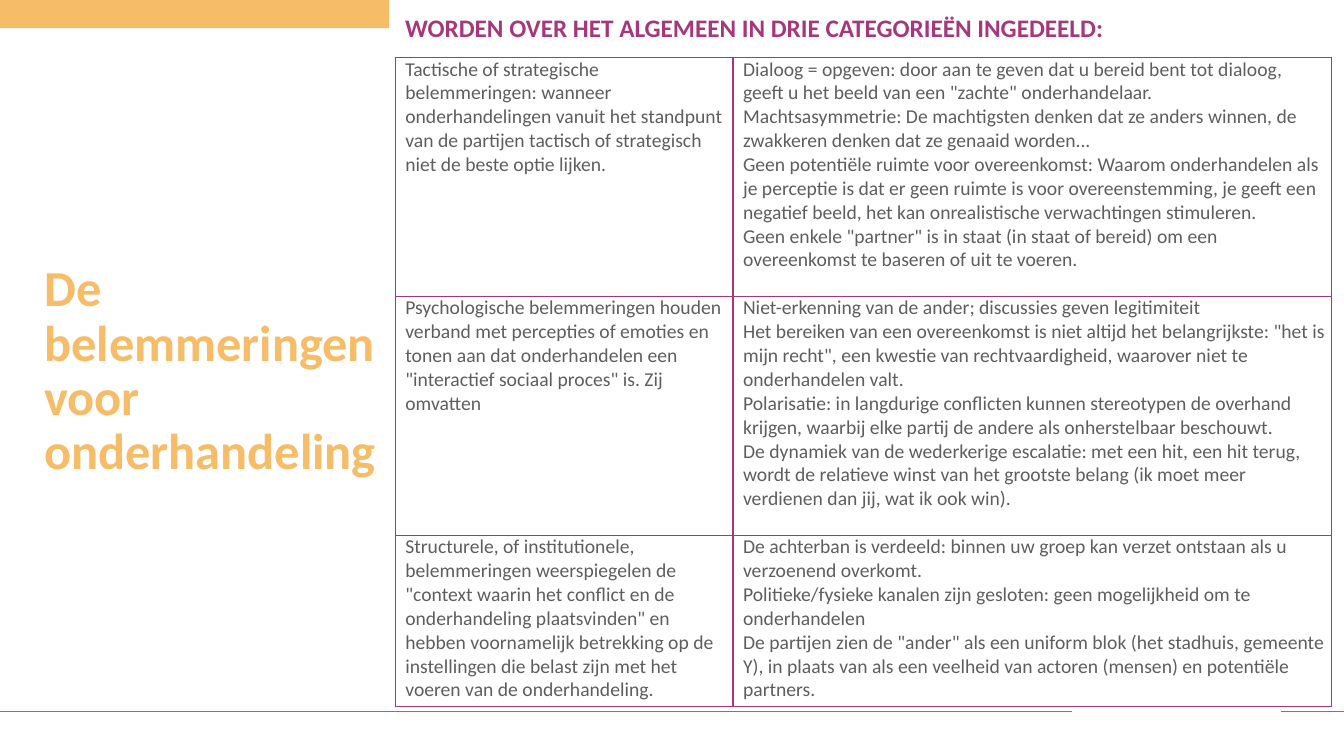
from lxml import etree
from pptx import Presentation
from pptx.dml.color import RGBColor
from pptx.enum.shapes import MSO_CONNECTOR, MSO_SHAPE
from pptx.enum.text import MSO_ANCHOR, PP_ALIGN
from pptx.oxml.ns import qn
from pptx.util import Inches, Pt

RECT = MSO_SHAPE.RECTANGLE
STRAIGHT = MSO_CONNECTOR.STRAIGHT
TOP, MIDDLE = MSO_ANCHOR.TOP, MSO_ANCHOR.MIDDLE
LEFT = PP_ALIGN.LEFT

FONT = "Calibri"
COLORS = {"accent": "F6BC67", "purple": "A7377D", "text": "5E5E5E", "rule": "797979"}

# Page grid, in inches
WIDTH, HEIGHT = 13.33, 7.5
SPLIT = 3.92
TABLE_TOP = 0.57
COLUMNS = [3.35, 5.94]
ROWS = [2.37, 2.37, 1.7]
RULE_Y = 7.06

TITLE = "De belemmeringen voor onderhandeling"
HEADING = "WORDEN OVER HET ALGEMEEN IN DRIE CATEGORIEËN INGEDEELD:"
# Each category with its list of barriers
CATEGORIES = [
    ("Tactische of strategische belemmeringen: wanneer onderhandelingen vanuit het "
     "standpunt van de partijen tactisch of strategisch niet de beste optie lijken.",
     ["Dialoog = opgeven: door aan te geven dat u bereid bent tot dialoog, geeft u het "
      "beeld van een \"zachte\" onderhandelaar.",
      "Machtsasymmetrie: De machtigsten denken dat ze anders winnen, de zwakkeren denken "
      "dat ze genaaid worden...",
      "Geen potentiële ruimte voor overeenkomst: Waarom onderhandelen als je perceptie is "
      "dat er geen ruimte is voor overeenstemming, je geeft een negatief beeld, het kan "
      "onrealistische verwachtingen stimuleren.",
      "Geen enkele \"partner\" is in staat (in staat of bereid) om een overeenkomst te "
      "baseren of uit te voeren."]),
    ("Psychologische belemmeringen houden verband met percepties of emoties en tonen aan "
     "dat onderhandelen een \"interactief sociaal proces\" is. Zij omvatten",
     ["Niet-erkenning van de ander; discussies geven legitimiteit",
      "Het bereiken van een overeenkomst is niet altijd het belangrijkste: \"het is mijn "
      "recht\", een kwestie van rechtvaardigheid, waarover niet te onderhandelen valt.",
      "Polarisatie: in langdurige conflicten kunnen stereotypen de overhand krijgen, "
      "waarbij elke partij de andere als onherstelbaar beschouwt.",
      "De dynamiek van de wederkerige escalatie: met een hit, een hit terug, wordt de "
      "relatieve winst van het grootste belang (ik moet meer verdienen dan jij, wat ik "
      "ook win)."]),
    ("Structurele, of institutionele, belemmeringen weerspiegelen de \"context waarin het "
     "conflict en de onderhandeling plaatsvinden\" en hebben voornamelijk betrekking op de "
     "instellingen die belast zijn met het voeren van de onderhandeling.",
     ["De achterban is verdeeld: binnen uw groep kan verzet ontstaan als u verzoenend "
      "overkomt.",
      "Politieke/fysieke kanalen zijn gesloten: geen mogelijkheid om te onderhandelen",
      "De partijen zien de \"ander\" als een uniform blok (het stadhuis, gemeente Y), in "
      "plaats van als een veelheid van actoren (mensen) en potentiële partners."]),
]


def rgb(name):
    return RGBColor.from_string(COLORS[name])


def style(p, size, color, bold=False):
    p.alignment = LEFT
    for r in p.runs:
        r.font.name, r.font.size, r.font.bold = FONT, Pt(size), bold
        r.font.color.rgb = rgb(color)


def add_bar(s):
    bar = s.shapes.add_shape(RECT, 0, 0, Inches(3.86), Inches(0.28))
    bar.shadow.inherit = False
    bar.fill.solid()
    bar.fill.fore_color.rgb = rgb("accent")
    bar.line.fill.background()


def add_rule(s, x1, x2):
    y = Inches(RULE_Y)
    rule = s.shapes.add_connector(STRAIGHT, Inches(x1), y, Inches(x2), y)
    rule.line.color.rgb = rgb("rule")
    rule.line.width = Pt(0.5)
    etree.SubElement(rule._element.spPr, qn("a:effectLst"))


def set_title(s):
    sp = s.shapes.title
    sp.left, sp.top = Inches(0.34), Inches(2.56)
    sp.width, sp.height = Inches(3.58), Inches(2.39)
    tf = sp.text_frame
    tf.text = TITLE
    tf.word_wrap = True
    tf.vertical_anchor = TOP
    p = tf.paragraphs[0]
    p.line_spacing = 0.9
    style(p, 36, "accent", bold=True)


def add_heading(s):
    sp = s.shapes.add_textbox(Inches(SPLIT), Inches(0.07), Inches(7.2), Inches(0.4))
    tf = sp.text_frame
    tf.text = HEADING
    tf.vertical_anchor = MIDDLE
    style(tf.paragraphs[0], 18, "purple", bold=True)


def add_borders(cell):
    tcPr = cell._tc.get_or_add_tcPr()
    for i, side in enumerate(("lnL", "lnR", "lnT", "lnB")):
        ln = etree.Element(qn("a:" + side), w=str(Pt(1)))
        fill = etree.SubElement(ln, qn("a:solidFill"))
        etree.SubElement(fill, qn("a:srgbClr"), val=COLORS["purple"])
        tcPr.insert(i, ln)


def fill_cell(cell, lines):
    cell.margin_left = cell.margin_right = Inches(0.06)
    cell.margin_top = cell.margin_bottom = 0
    cell.fill.background()
    add_borders(cell)
    tf = cell.text_frame
    tf.text = "\n".join(lines)
    for p in tf.paragraphs:
        p._p.get_or_add_pPr().set("marL", str(Inches(0.04)))
        style(p, 14, "text")


def add_category_table(s):
    frame = s.shapes.add_table(len(ROWS), len(COLUMNS), Inches(SPLIT), Inches(TABLE_TOP),
                               Inches(sum(COLUMNS)), Inches(sum(ROWS)))
    table = frame.table
    table.first_row = table.horz_banding = False
    for column, width in zip(table.columns, COLUMNS):
        column.width = Inches(width)
    for i, (category, barriers) in enumerate(CATEGORIES):
        table.rows[i].height = Inches(ROWS[i])
        fill_cell(table.cell(i, 0), [category])
        fill_cell(table.cell(i, 1), barriers)


def main():
    prs = Presentation()
    prs.slide_width, prs.slide_height = Inches(WIDTH), Inches(HEIGHT)
    s = prs.slides.add_slide(prs.slide_layouts[5])

    # Decoration
    add_bar(s)
    add_rule(s, 0, 10.63)
    add_rule(s, 12.71, WIDTH)

    # Content
    set_title(s)
    add_category_table(s)
    add_heading(s)
    prs.save("out.pptx")


if __name__ == "__main__":
    main()
